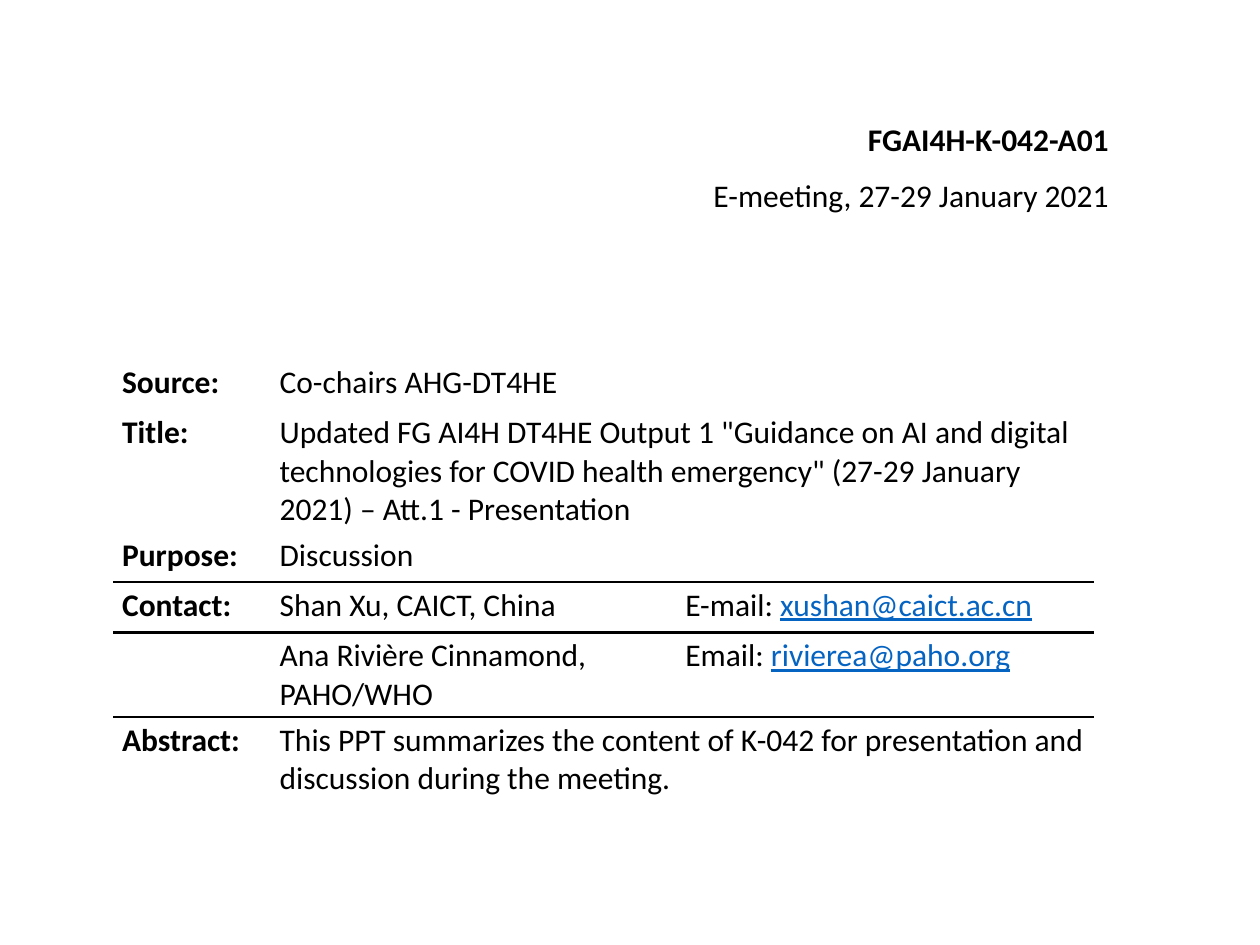
from lxml import etree
from pptx import Presentation
from pptx import util as u
from pptx.dml import color
from pptx.enum import text
from pptx.oxml import ns

COLORS = {"ink": "000000", "link": "0563C1"}
COLUMN_WIDTHS = (1.25, 3.22, 3.31)
ROW_HEIGHT = 0.4
RULES = (3, 4, 5)
ROWS = [
    ("Source:", "Co-chairs AHG-DT4HE"),
    ("Title:", 'Updated FG AI4H DT4HE Output 1 "Guidance on AI and digital technologies '
               'for COVID health emergency" (27-29 January 2021) – Att.1 - Presentation'),
    ("Purpose:", "Discussion"),
    ("Contact:", "Shan Xu, CAICT, China", ("E-mail: ", "xushan@caict.ac.cn")),
    ("", "Ana Rivière Cinnamond, PAHO/WHO", ("Email: ", "rivierea@paho.org")),
    ("Abstract:", "This PPT summarizes the content of K-042 for presentation "
                  "and discussion during the meeting."),
]


class CoverSheet:
    """Holds the slide and its text style, and adds headings and the details table."""

    font = "Calibri"
    size = u.Pt(18)
    rule_width = u.Pt(1.5)

    def __init__(self, presentation):
        self.width = presentation.slide_width
        self.height = presentation.slide_height
        self.slide = presentation.slides.add_slide(presentation.slide_layouts[6])

    def style(self, run, bold=False, link=False):
        run.font.name = self.font
        run.font.size = self.size
        run.font.bold = bold
        run.font.underline = link
        run.font.color.rgb = color.RGBColor.from_string(COLORS["link" if link else "ink"])

    def heading(self, words, left, top, width, height, bold=False):
        shape = self.slide.shapes.add_textbox(
            int(left * self.width), int(top * self.height),
            int(width * self.width), int(height * self.height))
        frame = shape.text_frame
        frame.word_wrap = True
        frame.auto_size = text.MSO_AUTO_SIZE.SHAPE_TO_FIT_TEXT
        frame.text = words
        paragraph = frame.paragraphs[0]
        paragraph.alignment = text.PP_ALIGN.RIGHT
        self.style(paragraph.runs[0], bold)

    def fill_cell(self, cell, content, bold):
        cell.margin_left = cell.margin_right = u.Pt(5)
        cell.margin_top = cell.margin_bottom = u.Pt(2.5)
        paragraph = cell.text_frame.paragraphs[0]
        paragraph.font.size = self.size
        if isinstance(content, tuple):
            for words, link in zip(content, (False, True)):
                run = paragraph.add_run()
                run.text = words
                self.style(run, link=link)
        elif content:
            paragraph.text = content
            self.style(paragraph.runs[0], bold)

    def borders(self, cell, top, bottom):
        cell.fill.background()
        properties = cell._tc.get_or_add_tcPr()
        sides = (("lnL", False), ("lnR", False), ("lnT", top), ("lnB", bottom))
        for index, (side, visible) in enumerate(sides):
            line = etree.Element(ns.qn(f"a:{side}"), w=str(int(self.rule_width)))
            paint = etree.SubElement(line, ns.qn("a:solidFill" if visible else "a:noFill"))
            if visible:
                etree.SubElement(paint, ns.qn("a:srgbClr"), val=COLORS["ink"])
            properties.insert(index, line)

    def details(self, rows, left, top):
        frame = self.slide.shapes.add_table(
            len(rows), len(COLUMN_WIDTHS), int(left * self.width), int(top * self.height),
            u.Inches(sum(COLUMN_WIDTHS)), u.Inches(ROW_HEIGHT * len(rows)))
        table = frame.table
        table.first_row = table.horz_banding = False
        for column, width in zip(table.columns, COLUMN_WIDTHS):
            column.width = u.Inches(width)
        for index, contents in enumerate(rows):
            if len(contents) == 2:
                table.cell(index, 1).merge(table.cell(index, 2))
            for position, content in enumerate(contents):
                self.fill_cell(table.cell(index, position), content, bold=position == 0)
            for position in range(len(COLUMN_WIDTHS)):
                self.borders(table.cell(index, position), index in RULES, index + 1 in RULES)


def main():
    presentation = Presentation()
    presentation.slide_width, presentation.slide_height = u.Inches(10), u.Inches(7.5)
    sheet = CoverSheet(presentation)
    sheet.heading("FGAI4H-K-042-A01", 0.61, 0.12, 0.28, 0.05, bold=True)
    sheet.heading("E-meeting, 27-29 January 2021", 0.43, 0.18, 0.46, 0.05)
    sheet.details(ROWS, 0.09, 0.38)
    presentation.save("out.pptx")


if __name__ == "__main__":
    main()
